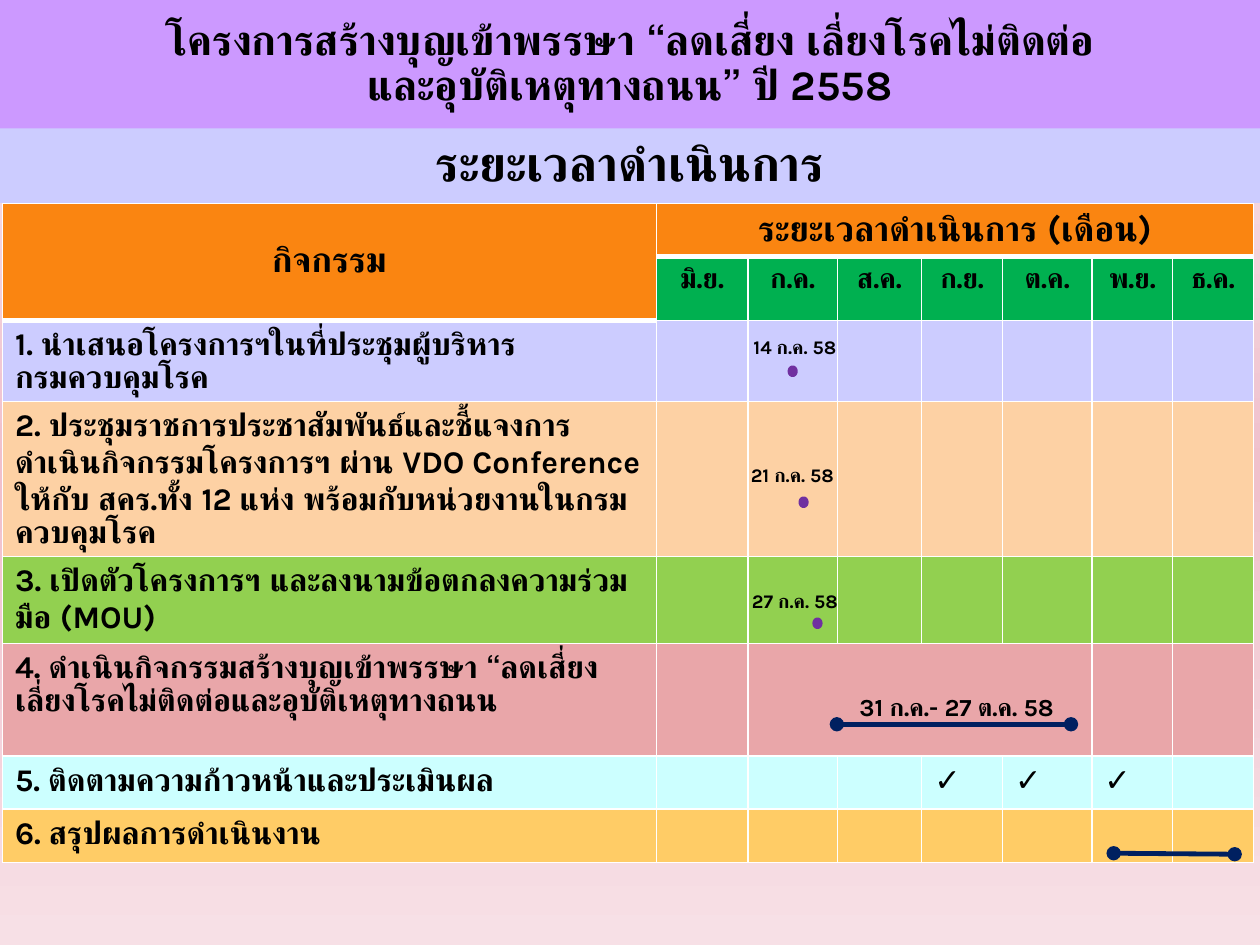
from copy import deepcopy
from dataclasses import dataclass

from lxml import etree
from pptx import Presentation
from pptx import util as u
from pptx.dml.color import RGBColor
from pptx.enum import shapes, text
from pptx.oxml import ns


@dataclass(frozen=True)
class Theme:
    font: str = "Karla"
    ink: str = "000000"
    grid: str = "FFFFFF"
    title: str = "CC99FF"
    band: str = "CCCCFF"
    head: str = "FA8511"
    month: str = "00B050"
    bar: str = "002060"
    dot: str = "7030A0"
    backdrop: tuple = ((0, "F7E6ED"), (0.5, "F0C0CC"), (1, "F7E0E6"))
    band_size: int = 28
    title_size: int = 24
    head_size: int = 20
    body_size: int = 18
    month_size: int = 16
    span_size: int = 14
    date_size: int = 11


MONTHS = ["มิ.ย.", "ก.ค.", "ส.ค.", "ก.ย.", "ต.ค.", "พ.ย.", "ธ.ค."]
ACTIVITIES = [
    ("1. นำเสนอโครงการฯในที่ประชุมผู้บริหาร\nกรมควบคุมโรค", "CCCCFF"),
    ("2. ประชุมราชการประชาสัมพันธ์และชี้แจงการดำเนินกิจกรรมโครงการฯ ผ่าน VDO Conference "
     "ให้กับ สคร.ทั้ง 12 แห่ง พร้อมกับหน่วยงานในกรมควบคุมโรค", "FDD1A4"),
    ("3. เปิดตัวโครงการฯ และลงนามข้อตกลงความร่วมมือ (MOU)", "92D050"),
    ("4. ดำเนินกิจกรรมสร้างบุญเข้าพรรษา “ลดเสี่ยง เลี่ยงโรคไม่ติดต่อและอุบัติเหตุทางถนน", "E9A6A9"),
    ("5. ติดตามความก้าวหน้าและประเมินผล", "CCFFFF"),
    ("6. สรุปผลการดำเนินงาน", "FFCC66"),
]
CHECKS = {(6, 4), (6, 5), (6, 6)}
COLS = [13.18, 1.85, 1.8, 1.7, 1.63, 1.8, 1.63, 1.63]
ROWS = [1.08, 1.29, 1.63, 3.1, 1.75, 2.27, 1.07, 1.08]
MILESTONES = [
    ("14 ก.ค. 58", 14.3, 6.63, 15.93, 7.42),
    ("21 ก.ค. 58", 14.25, 9.22, 16.15, 10.06),
    ("27 ก.ค. 58", 14.3, 11.76, 16.43, 12.5),
]


class Deck:
    """Draws styled elements on the current slide."""

    def __init__(self, prs, theme):
        self.t = theme
        self.s = prs.slides.add_slide(prs.slide_layouts[6])

    def backdrop(self):
        fill = self.s.background.fill
        fill.gradient()
        fill.gradient_angle = 270
        stops = self.s.element.find(".//" + ns.qn("a:gsLst"))
        stops.append(deepcopy(stops[0]))
        for stop, (position, color) in zip(fill.gradient_stops, self.t.backdrop):
            stop.position = position
            stop.color.rgb = RGBColor.from_string(color)

    def set_text(self, tf, words, size, align=text.PP_ALIGN.CENTER, spacing=None):
        tf.word_wrap = True
        for i, line in enumerate(words.split("\n")):
            p = tf.add_paragraph() if i else tf.paragraphs[0]
            p.add_run().text = line
            p.alignment = align
            p.line_spacing = spacing
            p.font.name, p.font.size, p.font.bold = self.t.font, u.Pt(size), True
            p.font.color.rgb = RGBColor.from_string(self.t.ink)

    def shape(self, kind, x, y, w, h, color):
        sp = self.s.shapes.add_shape(kind, u.Cm(x), u.Cm(y), u.Cm(w), u.Cm(h))
        sp.shadow.inherit = False
        sp.fill.solid()
        sp.fill.fore_color.rgb = RGBColor.from_string(color)
        sp.line.fill.background()
        return sp

    def banner(self, y, h, color, words, size, spacing=None):
        sp = self.shape(shapes.MSO_SHAPE.RECTANGLE, 0, y, 25.4, h, color)
        sp.text_frame.vertical_anchor = text.MSO_ANCHOR.MIDDLE
        self.set_text(sp.text_frame, words, size, spacing=spacing)

    def dot(self, x, y):
        sp = self.shape(shapes.MSO_SHAPE.OVAL, x, y, 0.1, 0.13, self.t.dot)
        sp.line.color.rgb = RGBColor.from_string(self.t.dot)
        sp.line.width = u.Pt(3)

    def label(self, x, y, w, h, words, size):
        sp = self.s.shapes.add_textbox(u.Cm(x), u.Cm(y), u.Cm(w), u.Cm(h))
        self.set_text(sp.text_frame, words, size)
        sp.text_frame.auto_size = text.MSO_AUTO_SIZE.SHAPE_TO_FIT_TEXT

    def bar(self, x1, y1, x2, y2):
        sp = self.s.shapes.add_connector(
            shapes.MSO_CONNECTOR.STRAIGHT, u.Cm(x1), u.Cm(y1), u.Cm(x2), u.Cm(y2))
        sp.line.color.rgb = RGBColor.from_string(self.t.bar)
        sp.line.width = u.Pt(2.75)
        ln = sp.element.spPr.find(ns.qn("a:ln"))
        for end in ("a:headEnd", "a:tailEnd"):
            etree.SubElement(ln, ns.qn(end), type="oval")
        etree.SubElement(sp.element.spPr, ns.qn("a:effectLst"))

    def table(self, x, y, cols, rows):
        frame = self.s.shapes.add_table(
            len(rows), len(cols), u.Cm(x), u.Cm(y), u.Cm(sum(cols)), u.Cm(sum(rows)))
        table = frame.table
        table.first_row = table.horz_banding = False
        for column, width in zip(table.columns, cols):
            column.width = u.Cm(width)
        for row, height in zip(table.rows, rows):
            row.height = u.Cm(height)
        return table

    def cell(self, cell, color, words="", size=None, align=text.PP_ALIGN.CENTER, bottom=1):
        if words:
            self.set_text(cell.text_frame, words, size, align)
        pr = cell._tc.get_or_add_tcPr()
        for side, width in (("L", 1), ("R", 1), ("T", 1), ("B", bottom)):
            ln = etree.SubElement(pr, ns.qn("a:ln" + side), w=str(int(u.Pt(width))))
            fill = etree.SubElement(ln, ns.qn("a:solidFill"))
            etree.SubElement(fill, ns.qn("a:srgbClr"), val=self.t.grid)
        cell.fill.solid()
        cell.fill.fore_color.rgb = RGBColor.from_string(color)


def schedule(deck, t):
    table = deck.table(0.05, 4.09, COLS, ROWS)
    for col in range(len(COLS)):
        deck.cell(table.cell(0, col), t.head, bottom=3)
    deck.set_text(table.cell(0, 0).text_frame, "กิจกรรม", t.head_size)
    deck.set_text(table.cell(0, 1).text_frame, "ระยะเวลาดำเนินการ (เดือน)", t.head_size)
    table.cell(0, 0).vertical_anchor = text.MSO_ANCHOR.MIDDLE
    deck.cell(table.cell(1, 0), t.head, bottom=3)
    for col, month in enumerate(MONTHS, 1):
        deck.cell(table.cell(1, col), t.month, month, t.month_size)
    for row, (activity, color) in enumerate(ACTIVITIES, 2):
        for col in range(len(COLS)):
            words = "✓" if (row, col) in CHECKS else "" if col else activity
            deck.cell(table.cell(row, col), color, words, t.body_size, text.PP_ALIGN.LEFT)
    for first, last in (((0, 0), (1, 0)), ((0, 1), (0, 7)), ((5, 2), (5, 5))):
        table.cell(*first).merge(table.cell(*last))


def main():
    prs = Presentation()
    prs.slide_width, prs.slide_height = u.Cm(25.4), u.Cm(19.05)
    t = Theme()
    deck = Deck(prs, t)
    deck.backdrop()
    schedule(deck, t)
    deck.bar(22.45, 17.2, 24.89, 17.22)
    deck.bar(16.87, 14.6, 21.59, 14.6)
    deck.banner(2.44, 1.65, t.band, "ระยะเวลาดำเนินการ", t.band_size)
    deck.banner(0, 2.59, t.title,
                "โครงการสร้างบุญเข้าพรรษา “ลดเสี่ยง เลี่ยงโรคไม่ติดต่อ\n"
                "และอุบัติเหตุทางถนน” ปี 2558", t.title_size, 0.9)
    deck.label(16.16, 13.82, 6.25, 0.86, "31 ก.ค.- 27 ต.ค. 58", t.span_size)
    for date, x, y, dot_x, dot_y in MILESTONES:
        deck.label(x, y, 3.45, 0.74, date, t.date_size)
        deck.dot(dot_x, dot_y)
    prs.save("out.pptx")


if __name__ == "__main__":
    main()
